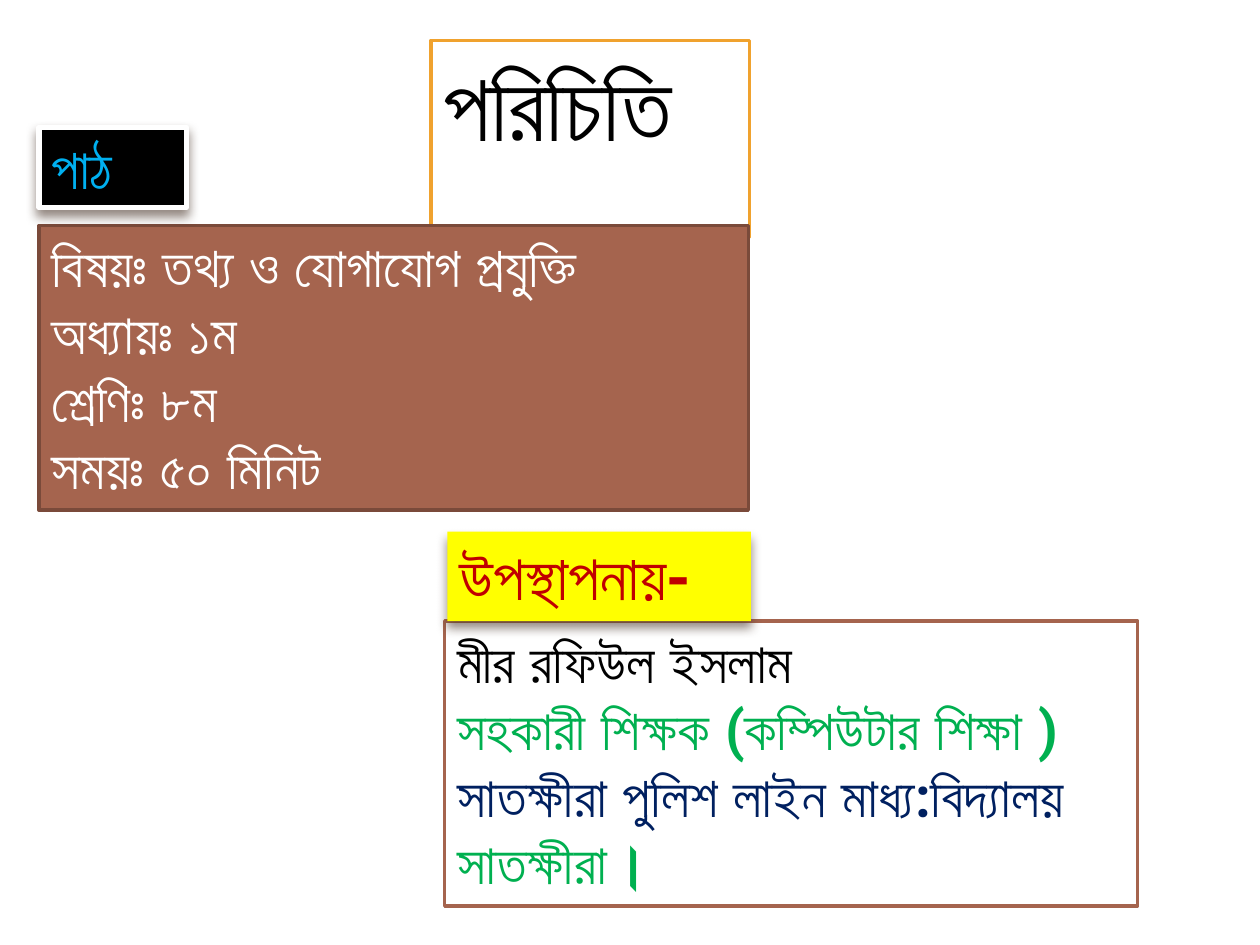
from lxml import etree
from pptx import Presentation
from pptx.dml.color import RGBColor
from pptx.enum.shapes import MSO_SHAPE
from pptx.enum.text import MSO_ANCHOR, MSO_AUTO_SIZE, PP_ALIGN
from pptx.oxml.ns import qn
from pptx.util import Inches, Pt

RECTANGLE = MSO_SHAPE.RECTANGLE
TOP = MSO_ANCHOR.TOP
FIT_SHAPE = MSO_AUTO_SIZE.SHAPE_TO_FIT_TEXT
LEFT = PP_ALIGN.LEFT
TITLE_ONLY = 5

FONT = "Roboto"
BLACK, WHITE, YELLOW = "000000", "FFFFFF", "FFFF00"
ORANGE, BROWN, DARK_BROWN = "F0A22E", "A5644E", "7A4A3A"
RED, GREEN, NAVY, SKY = "C00000", "00B050", "002060", "00B0F0"
SHADOW = "4E3B30"


def rgb(value):
    return RGBColor.from_string(value)


def write_text(paragraph, text, size=32, color=BLACK, bold=True):
    paragraph.alignment = LEFT
    run = paragraph.add_run()
    run.text = text
    run.font.name = FONT
    run.font.size = Pt(size)
    run.font.bold = bold
    run.font.color.rgb = rgb(color)


def write_lines(shape, lines, size=32):
    """Write (text, colour) pairs, one paragraph each."""
    frame = shape.text_frame
    frame.word_wrap = True
    frame.auto_size = FIT_SHAPE
    frame.vertical_anchor = TOP
    for index, (text, color) in enumerate(lines):
        paragraph = frame.add_paragraph() if index else frame.paragraphs[0]
        write_text(paragraph, text, size=size, color=color)


def format_box(shape, fill, line=None, line_width=2):
    shape.fill.solid()
    shape.fill.fore_color.rgb = rgb(fill)
    if line:
        shape.line.color.rgb = rgb(line)
        shape.line.width = Pt(line_width)
    else:
        shape.line.fill.background()


def add_box(slide, left, top, width, height, **style):
    shape = slide.shapes.add_shape(
        RECTANGLE, Inches(left), Inches(top), Inches(width), Inches(height))
    shape.shadow.inherit = False
    format_box(shape, **style)
    return shape


def add_drop_shadow(shape):
    effects = shape.element.spPr.find(qn("a:effectLst"))
    shadow = etree.SubElement(
        effects, qn("a:outerShdw"), blurRad=str(Pt(6)), dist=str(Pt(4)),
        dir="5400000", rotWithShape="0")
    color = etree.SubElement(shadow, qn("a:srgbClr"), val=SHADOW)
    etree.SubElement(color, qn("a:alpha"), val="60000")


def add_title(slide, text):
    title = slide.shapes.title
    title.left, title.top = Inches(3.42), Inches(0.32)
    title.width, title.height = Inches(2.53), Inches(1.01)
    format_box(title, fill=WHITE, line=ORANGE)
    write_lines(title, [(text, BLACK)], size=54)


def main():
    presentation = Presentation()
    presentation.slide_width = Inches(10)
    presentation.slide_height = Inches(7.5)
    slide = presentation.slides.add_slide(presentation.slide_layouts[TITLE_ONLY])

    add_title(slide, "পরিচিতি")

    presenter = add_box(slide, 3.53, 4.93, 5.5, 2.26, fill=WHITE, line=BROWN)
    write_lines(presenter, [
        ("মীর রফিউল ইসলাম", BLACK),
        ("সহকারী শিক্ষক (কম্পিউটার শিক্ষা )", GREEN),
        ("সাতক্ষীরা পুলিশ লাইন মাধ্য:বিদ্যালয়", NAVY),
        ("সাতক্ষীরা।", GREEN),
    ])

    lesson = add_box(slide, 0.31, 1.79, 5.63, 2.26, fill=BROWN, line=DARK_BROWN)
    write_lines(lesson, [(text, WHITE) for text in (
        "বিষয়ঃ তথ্য ও যোগাযোগ প্রযুক্তি",
        "অধ্যায়ঃ ১ম",
        "শ্রেণিঃ ৮ম",
        "সময়ঃ ৫০ মিনিট",
    )])

    presenter_label = add_box(slide, 3.55, 4.22, 2.41, 0.71, fill=YELLOW)
    write_lines(presenter_label, [("উপস্থাপনায়-", RED)], size=36)

    lesson_label = add_box(slide, 0.31, 1.01, 1.17, 0.64,
                           fill=BLACK, line=WHITE, line_width=3)
    write_lines(lesson_label, [("পাঠ", SKY)])

    for label in (presenter_label, lesson_label):
        add_drop_shadow(label)

    presentation.save("out.pptx")


if __name__ == "__main__":
    main()
